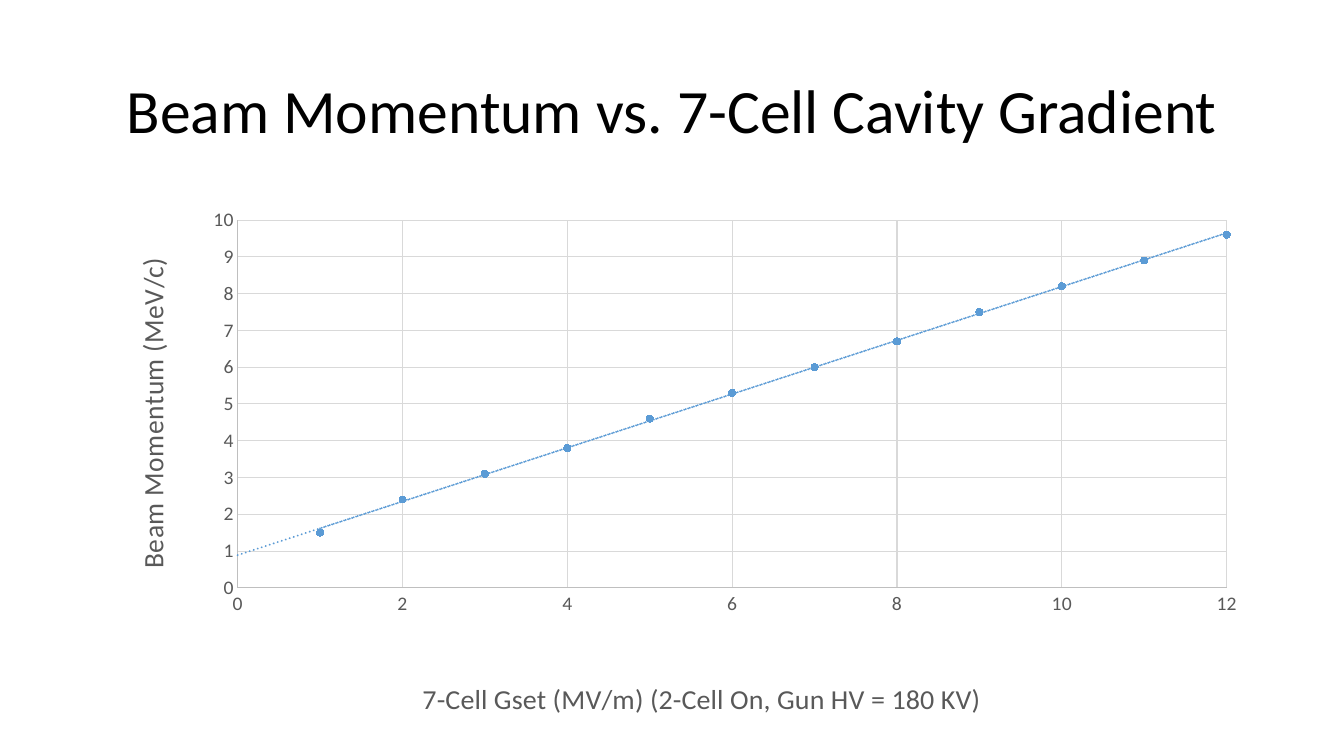
from dataclasses import dataclass

import pptx
import pptx.chart.data
import pptx.dml.color
import pptx.enum.chart
import pptx.enum.dml
import pptx.enum.text
import pptx.oxml
import pptx.oxml.ns
import pptx.util
from pptx.util import Inches

FONT = "Calibri"
BLUE = "5B9BD5"
GRAY = "595959"
C_NS = pptx.oxml.ns.nsdecls("c", "a")
MOMENTA = [1.5, 2.4, 3.1, 3.8, 4.6, 5.3, 6, 6.7, 7.5, 8.2, 8.9, 9.6]


@dataclass
class AxisStyle:
    title: str
    maximum: float
    step: float
    title_x: float
    title_y: float


GRADIENT_AXIS = AxisStyle("7-Cell Gset (MV/m) (2-Cell On, Gun HV = 180 KV)", 12, 2, 0.28, 0.92)
MOMENTUM_AXIS = AxisStyle("Beam Momentum (MeV/c)", 10, 1, 0.03, 0.11)


def rgb(value: str) -> pptx.dml.color.RGBColor:
    return pptx.dml.color.RGBColor.from_string(value)


def set_font(font, size: float, color: str) -> None:
    font.name = FONT
    font.size = pptx.util.Pt(size)
    font.bold = False
    font.color.rgb = rgb(color)


def set_line(line, color: str) -> None:
    line.color.rgb = rgb(color)
    line.width = pptx.util.Pt(0.75)


def layout(x: float, y: float, size: str = "", target: str = ""):
    return pptx.oxml.parse_xml(
        f'<c:layout {C_NS}><c:manualLayout>{target}'
        f'<c:xMode val="edge"/><c:yMode val="edge"/>'
        f'<c:x val="{x}"/><c:y val="{y}"/>{size}</c:manualLayout></c:layout>'
    )


def replace_layout(parent, new_layout, index: int) -> None:
    for old in parent.findall(pptx.oxml.ns.qn("c:layout")):
        parent.remove(old)
    parent.insert(index, new_layout)


def style_axis(axis, style: AxisStyle) -> None:
    axis.minimum_scale = 0
    axis.maximum_scale = style.maximum
    axis.major_unit = style.step
    axis.major_tick_mark = pptx.enum.chart.XL_TICK_MARK.NONE
    axis.minor_tick_mark = pptx.enum.chart.XL_TICK_MARK.NONE
    axis.tick_labels.number_format = "General"
    axis.tick_labels.number_format_is_linked = False
    set_font(axis.tick_labels.font, 14, GRAY)
    set_line(axis.format.line, "BFBFBF")
    axis.has_major_gridlines = True
    set_line(axis.major_gridlines.format.line, "D9D9D9")
    p = axis.axis_title.text_frame.paragraphs[0]
    p.text = style.title
    set_font(p.font, 20, GRAY)
    replace_layout(axis.axis_title._element, layout(style.title_x, style.title_y), 1)


def add_trend(series, backward: float) -> None:
    trend = pptx.oxml.parse_xml(
        f'<c:trendline {C_NS}><c:spPr><a:ln w="19050" cap="rnd"><a:solidFill>'
        f'<a:srgbClr val="{BLUE}"/></a:solidFill><a:prstDash val="sysDot"/></a:ln></c:spPr>'
        f'<c:trendlineType val="linear"/><c:backward val="{backward}"/>'
        f'<c:dispRSqr val="0"/><c:dispEq val="0"/></c:trendline>'
    )
    series._element.find(pptx.oxml.ns.qn("c:xVal")).addprevious(trend)


def add_title(s) -> None:
    sp = s.shapes.add_textbox(Inches(0.92), Inches(0.4), Inches(11.5), Inches(1.45))
    tf = sp.text_frame
    tf.word_wrap = True
    tf.vertical_anchor = pptx.enum.text.MSO_ANCHOR.MIDDLE
    p = tf.paragraphs[0]
    p.text = "Beam Momentum vs. 7-Cell Cavity Gradient"
    p.alignment = pptx.enum.text.PP_ALIGN.CENTER
    p.line_spacing = 0.9
    set_font(p.font, 44, "000000")


def add_momentum_chart(s) -> None:
    data = pptx.chart.data.XyChartData()
    points = data.add_series("Series 1")
    for gradient, momentum in enumerate(MOMENTA, start=1):
        points.add_data_point(gradient, momentum)
    chart = s.shapes.add_chart(
        pptx.enum.chart.XL_CHART_TYPE.XY_SCATTER,
        Inches(0.92), Inches(2), Inches(11.5), Inches(5.19), data,
    ).chart
    set_font(chart.font, 10, "000000")
    chart.has_legend = False
    chart.has_title = False
    plot = chart.plots[0]
    plot.vary_by_categories = False
    style_axis(chart.category_axis, GRADIENT_AXIS)
    style_axis(chart.value_axis, MOMENTUM_AXIS)
    plot_area = layout(
        0.125, 0.036, '<c:w val="0.853"/><c:h val="0.716"/>', '<c:layoutTarget val="inner"/>'
    )
    replace_layout(chart._chartSpace.chart.plotArea, plot_area, 0)
    series = plot.series[0]
    series.format.line.fill.background()
    marker = series.marker
    marker.style = pptx.enum.chart.XL_MARKER_STYLE.CIRCLE
    marker.size = 5
    marker.format.fill.solid()
    marker.format.fill.fore_color.rgb = rgb(BLUE)
    set_line(marker.format.line, BLUE)
    for backward in (0, 1):
        add_trend(series, backward)


def main() -> None:
    prs = pptx.Presentation()
    prs.slide_width = Inches(13.33)
    prs.slide_height = Inches(7.5)
    s = prs.slides.add_slide(prs.slide_layouts[6])
    add_title(s)
    add_momentum_chart(s)
    prs.save("out.pptx")


if __name__ == "__main__":
    main()
